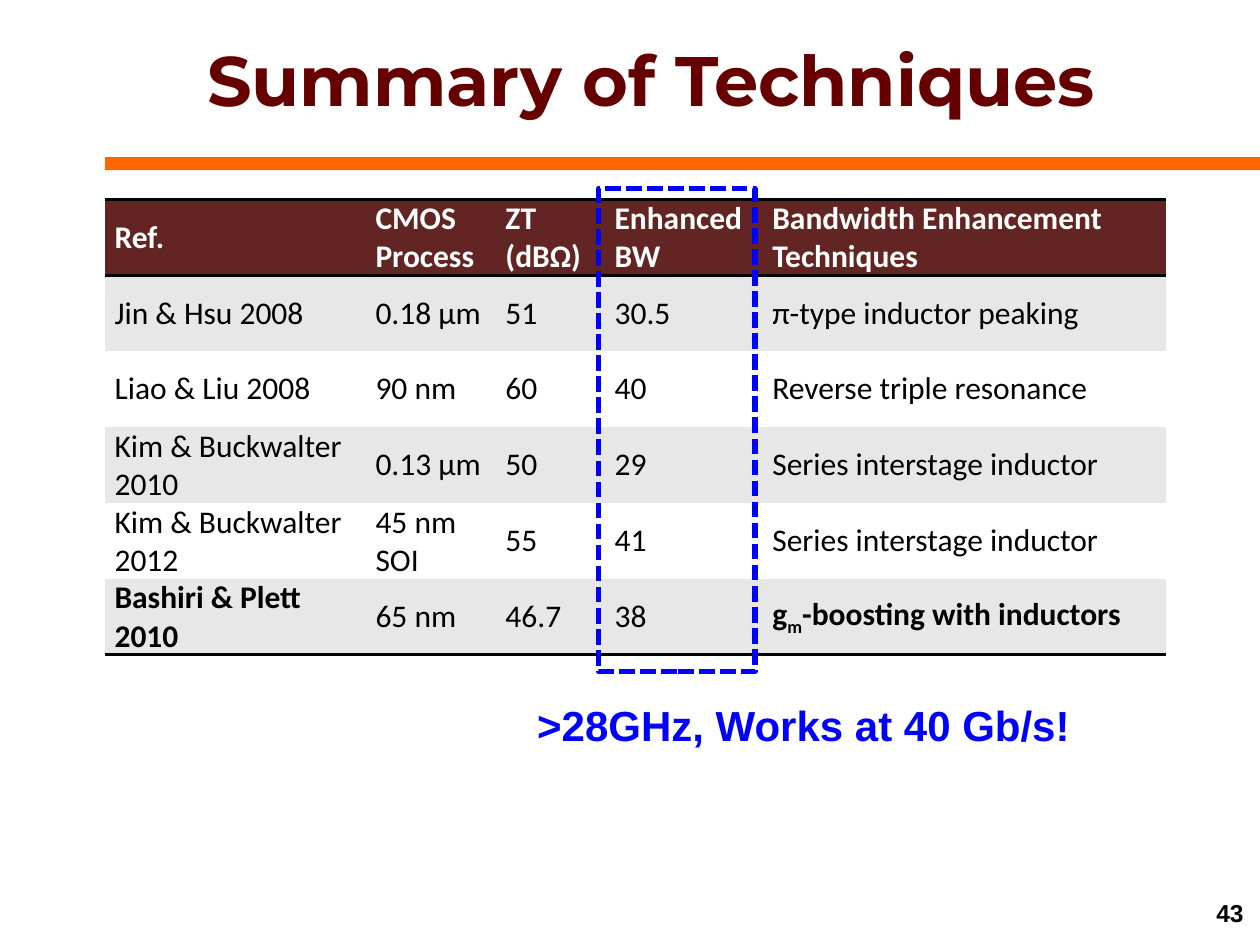
from lxml.etree import SubElement
from pptx import Presentation
from pptx.dml.color import RGBColor
from pptx.enum.dml import MSO_LINE as Dash
from pptx.enum.shapes import MSO_SHAPE as Shape
from pptx.enum.text import MSO_ANCHOR as Anchor, PP_ALIGN as Align
from pptx.oxml.ns import qn
from pptx.util import Cm, Pt

MAROON = RGBColor(0x66, 0x00, 0x00)
ORANGE = RGBColor(0xFF, 0x66, 0x00)
BROWN = RGBColor(0x63, 0x25, 0x23)
GREY = RGBColor(0xE7, 0xE7, 0xE7)
WHITE = RGBColor(0xFF, 0xFF, 0xFF)
BLACK = RGBColor(0x00, 0x00, 0x00)
BLUE = RGBColor(0x00, 0x00, 0xFF)
NO_STYLE = "{2D5ABB26-0587-4C30-8999-92F81FD0307C}"

LEFT = 2.12
COLS = [5.26, 2.62, 2.2, 3.18, 8.12]
ROW = 1.53
ROWS = [
    ["Ref.", "CMOS Process", "ZT\n(dBΩ)", "Enhanced BW",
     "Bandwidth Enhancement Techniques"],
    ["Jin & Hsu 2008", "0.18 μm", "51", "30.5", "π-type inductor peaking"],
    ["Liao & Liu 2008", "90 nm", "60", "40", "Reverse triple resonance"],
    ["Kim & Buckwalter 2010", "0.13 μm", "50", "29",
     "Series interstage inductor"],
    ["Kim & Buckwalter 2012", "45 nm SOI", "55", "41",
     "Series interstage inductor"],
    ["Bashiri & Plett 2010", "65 nm", "46.7", "38",
     [("g", 0), ("m", -25), ("-boosting with inductors", 0)]],
]
LAST = len(ROWS) - 1


class Deck:
    """Holds the text style and the current slide."""

    def __init__(self, font):
        self.font = font
        self.prs = Presentation()
        self.prs.slide_width, self.prs.slide_height = Cm(25.4), Cm(19.05)
        self.slide = self.prs.slides.add_slide(self.prs.slide_layouts[6])

    def run(self, para, text, size, color, bold=True, font=None, base=0):
        run = para.add_run()
        run.text = text
        run.font.size, run.font.bold = Pt(size), bold
        run.font.name = font or self.font
        run.font.color.rgb = color
        if base:
            run.font._element.set("baseline", str(base * 1000))

    def text(self, box, text, size, color, font=None,
             align=Align.LEFT, anchor=Anchor.TOP):
        frame = self.slide.shapes.add_textbox(*map(Cm, box)).text_frame
        frame.word_wrap = True
        frame.vertical_anchor = anchor
        para = frame.paragraphs[0]
        para.alignment = align
        self.run(para, text, size, color, font=font)

    def rect(self, box, fill=None, line=None):
        shape = self.slide.shapes.add_shape(Shape.RECTANGLE, *map(Cm, box))
        shape.shadow.inherit = False
        if fill is None:
            shape.fill.background()
        else:
            shape.fill.solid()
            shape.fill.fore_color.rgb = fill
        if line is None:
            shape.line.fill.background()
        else:
            shape.line.color.rgb = line
            shape.line.width = Pt(3)
            shape.line.dash_style = Dash.SQUARE_DOT

    def rule(self, cell, side):
        props = cell._tc.get_or_add_tcPr()
        line = SubElement(props, qn("a:ln" + side), w=str(Pt(2)))
        fill = SubElement(line, qn("a:solidFill"))
        SubElement(fill, qn("a:srgbClr"), val=str(BLACK))
        props.insert(0, line)

    def cell(self, cell, value, fill, color, bold):
        cell.margin_left = cell.margin_right = Cm(0.19)
        cell.margin_top = cell.margin_bottom = 0
        cell.vertical_anchor = Anchor.MIDDLE
        cell.fill.solid()
        cell.fill.fore_color.rgb = fill
        frame = cell.text_frame
        if isinstance(value, str):
            lines = [[(line, 0)] for line in value.split("\n")]
        else:
            lines = [value]
        for num, line in enumerate(lines):
            para = frame.add_paragraph() if num else frame.paragraphs[0]
            for part, base in line:
                self.run(para, part, 18, color, bold, "Calibri", base)

    def table(self, left, top, cols, high, rows):
        table = self.slide.shapes.add_table(
            len(rows), len(cols), Cm(left), Cm(top),
            Cm(sum(cols)), Cm(high * len(rows))).table
        table._tbl.tblPr.find(qn("a:tableStyleId")).text = NO_STYLE
        table.horz_banding = False
        for col, width in zip(table.columns, cols):
            col.width = Cm(width)
        for r, row in enumerate(rows):
            table.rows[r].height = Cm(high)
            head = r == 0
            fill = BROWN if head else GREY if r % 2 else WHITE
            for c, value in enumerate(row):
                cell = table.cell(r, c)
                own = r == LAST and c in (0, len(cols) - 1)
                self.cell(cell, value, fill, WHITE if head else BLACK,
                          head or own)
                if head or r == LAST:
                    self.rule(cell, "B")
                if head:
                    self.rule(cell, "T")


def main():
    deck = Deck("Arial")

    # Title and bar
    deck.rect((LEFT, 3.17, 23.28, 0.26), fill=ORANGE)
    deck.text((LEFT, 0.2, 22.01, 2.75), "Summary of Techniques", 40, MAROON,
              "Montserrat", Align.CENTER, Anchor.MIDDLE)

    # Comparison table
    deck.table(LEFT, 4.02, COLS, ROW, ROWS)

    # Page number
    deck.text((23.47, 17.8, 1.85, 1.02), "43", 14, BLACK,
              align=Align.RIGHT, anchor=Anchor.BOTTOM)

    # Bandwidth highlight and remark
    deck.rect((12.07, 3.8, 3.15, 9.74), line=BLUE)
    deck.text((10.58, 13.97, 11.85, 2.33), ">28GHz, Works at 40 Gb/s!",
              24, BLUE)

    deck.prs.save("out.pptx")


if __name__ == "__main__":
    main()
